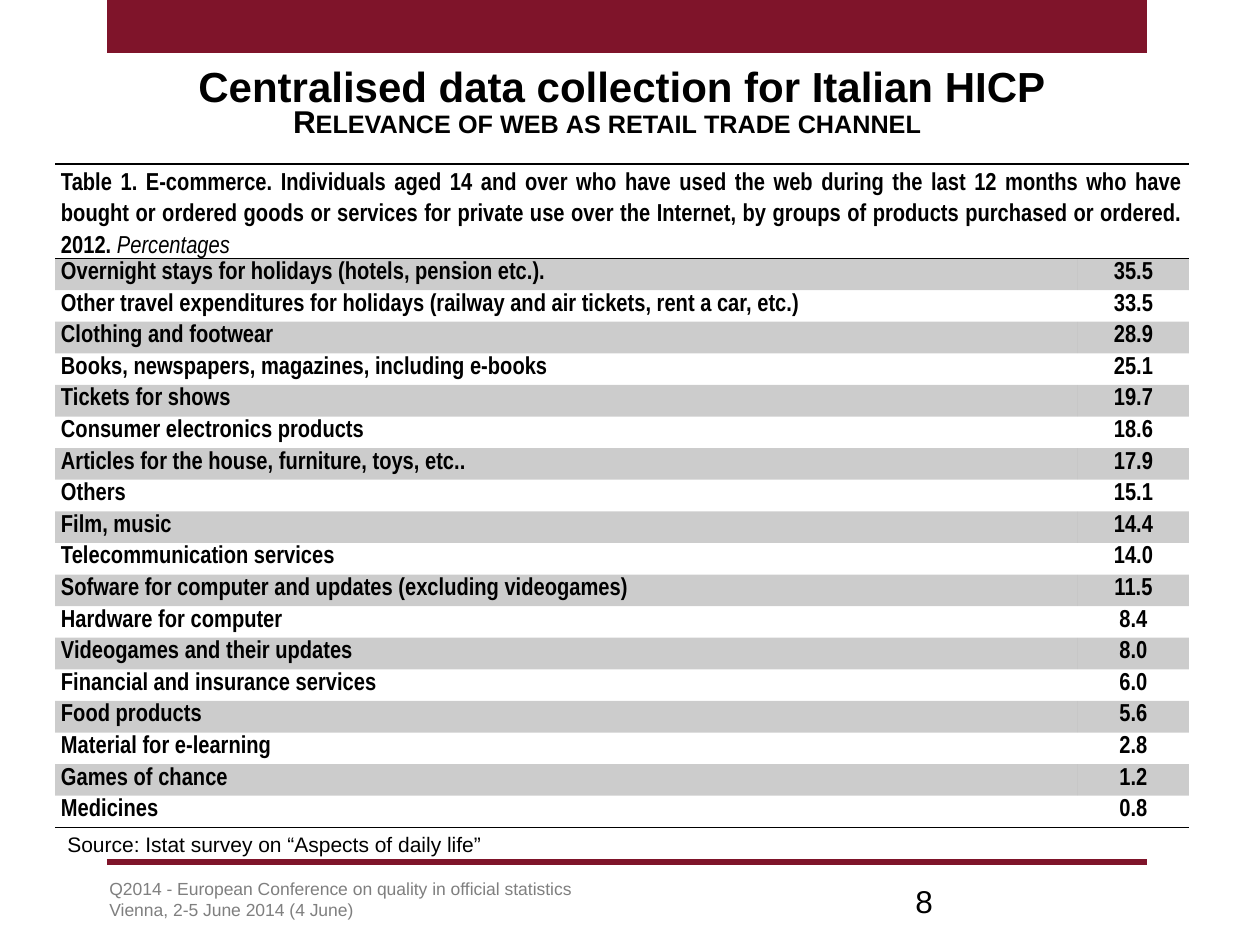
from lxml.etree import SubElement
from pptx import Presentation
from pptx.dml.color import RGBColor
from pptx.enum.shapes import MSO_CONNECTOR, MSO_SHAPE
from pptx.enum.text import MSO_ANCHOR, PP_ALIGN
from pptx.oxml.ns import qn
from pptx.util import Pt

PX = 914400 / 126
RED, BLACK, GREY = "7F142A", "000000", "7F7F7F"
NO_GRID = "{2D5ABB26-0587-4C30-8999-92F81FD0307C}"

TITLE = "Centralised data collection for Italian HICP"
SUBTITLE = "Relevance of web as retail trade channel"
CAPTION = ("Table 1. E-commerce. Individuals aged 14 and over who have used the web "
           "during the last 12 months who have bought or ordered goods or services for "
           "private use over the Internet, by groups of products purchased or ordered. 2012. ")
UNIT = "Percentages"
SHARES = [
    ("Overnight stays for holidays (hotels, pension etc.).", "35.5"),
    ("Other travel expenditures for holidays (railway and air tickets, rent a car, etc.)", "33.5"),
    ("Clothing and footwear", "28.9"),
    ("Books, newspapers, magazines, including e-books", "25.1"),
    ("Tickets for shows", "19.7"),
    ("Consumer electronics products", "18.6"),
    ("Articles for the house, furniture, toys, etc..", "17.9"),
    ("Others", "15.1"),
    ("Film, music", "14.4"),
    ("Telecommunication services", "14.0"),
    ("Sofware for computer and updates (excluding videogames)", "11.5"),
    ("Hardware for computer", "8.4"),
    ("Videogames and their updates", "8.0"),
    ("Financial and insurance services", "6.0"),
    ("Food products", "5.6"),
    ("Material for e-learning", "2.8"),
    ("Games of chance", "1.2"),
    ("Medicines", "0.8"),
]
SOURCE = "Source: Istat survey on “Aspects of daily life”"
FOOTER = ["Q2014 - European Conference on quality in official statistics",
          "Vienna, 2-5 June 2014 (4 June)"]

TABLE = (55, 164, 1134, 663)
COLS = (1023, 111)
HEAD = 94


def px(*sizes):
    return [round(size * PX) for size in sizes]


def color(code):
    return RGBColor.from_string(code)


def add_run(par, text, size, font="Arial", code=BLACK, bold=False, italic=False):
    run = par.add_run()
    run.text = text
    run.font.name, run.font.size = font, Pt(size)
    run.font.bold, run.font.italic = bold, italic
    run.font.color.rgb = color(code)
    return run


def add_text(slide, box, lines, size, align=PP_ALIGN.LEFT, anchor=MSO_ANCHOR.TOP, **style):
    frame = slide.shapes.add_textbox(*px(*box)).text_frame
    frame.word_wrap = True
    frame.vertical_anchor = anchor
    for i, line in enumerate(lines):
        par = frame.add_paragraph() if i else frame.paragraphs[0]
        par.alignment = align
        add_run(par, line, size, **style)
    return frame


def add_rule(cell, side):
    """Draw a 1 pt black border; side is T or B."""
    line = SubElement(cell._tc.get_or_add_tcPr(), qn(f"a:ln{side}"), w=str(Pt(1)))
    fill = SubElement(line, qn("a:solidFill"))
    SubElement(fill, qn("a:srgbClr"), val=BLACK)


def shade(cell):
    """Fill with black at 20 % opacity."""
    cell.fill.solid()
    cell.fill.fore_color.rgb = color(BLACK)
    tone = cell._tc.tcPr.find(".//" + qn("a:srgbClr"))
    SubElement(tone, qn("a:alpha"), val="20000")


def set_cell(cell, parts, align, leading):
    cell.margin_left = cell.margin_right = px(6)[0]
    cell.margin_top = cell.margin_bottom = 0
    cell.vertical_anchor = MSO_ANCHOR.MIDDLE
    par = cell.text_frame.paragraphs[0]
    par.alignment, par.line_spacing = align, Pt(leading)
    for text, bold in parts:
        add_run(par, text, 14, "Arial Narrow", bold=bold, italic=not bold)


def add_shares(slide):
    table = slide.shapes.add_table(len(SHARES) + 1, 2, *px(*TABLE)).table
    table.first_row = table.horz_banding = False
    table._tbl.tblPr.find(qn("a:tableStyleId")).text = NO_GRID
    for col, width in zip(table.columns, px(*COLS)):
        col.width = width
    step = (TABLE[3] - HEAD) / len(SHARES)
    for row, height in zip(table.rows, px(HEAD, *[step] * len(SHARES))):
        row.height = height

    head = table.cell(0, 0)
    head.merge(table.cell(0, 1))
    for cell in table.rows[0].cells:
        add_rule(cell, "T")
        add_rule(cell, "B")
    set_cell(head, [(CAPTION, True), (UNIT, False)], PP_ALIGN.JUSTIFY, 18)

    for i, share in enumerate(SHARES, 1):
        for j, align in enumerate((PP_ALIGN.JUSTIFY, PP_ALIGN.CENTER)):
            cell = table.cell(i, j)
            set_cell(cell, [(share[j], True)], align, 12)
            if i == len(SHARES):
                add_rule(cell, "B")
            if i % 2:
                shade(cell)


def add_frame(slide):
    """Draw the top band and the line above the footer."""
    band = slide.shapes.add_shape(MSO_SHAPE.RECTANGLE, *px(107, 0, 1040, 53))
    band.shadow.inherit = False
    band.fill.solid()
    band.fill.fore_color.rgb = color(RED)
    band.line.fill.background()
    line = slide.shapes.add_connector(MSO_CONNECTOR.STRAIGHT, *px(107, 862, 1147, 862))
    line.line.color.rgb = color(RED)
    line.line.width = Pt(3.35)
    SubElement(line._element.spPr, qn("a:effectLst"))


def main():
    deck = Presentation()
    deck.slide_width, deck.slide_height = px(1260, 945)
    slide = deck.slides.add_slide(deck.slide_layouts[6])
    add_frame(slide)
    foot = add_text(slide, (97, 878, 965, 49), FOOTER, 10, code=GREY)
    foot.paragraphs[0].line_spacing = 0.7
    add_text(slide, (903, 876, 294, 50), ["8"], 18, anchor=MSO_ANCHOR.MIDDLE)
    add_text(slide, (55, 54, 1134, 54), [TITLE], 24, PP_ALIGN.CENTER, bold=True)
    sub = add_text(slide, (62, 96, 1090, 50), [SUBTITLE], 18, PP_ALIGN.CENTER, bold=True)
    sub.paragraphs[0].runs[0].font._element.set("cap", "small")
    add_shares(slide)
    add_text(slide, (55, 825, 1134, 38), [SOURCE], 12)
    deck.save("out.pptx")


if __name__ == "__main__":
    main()
